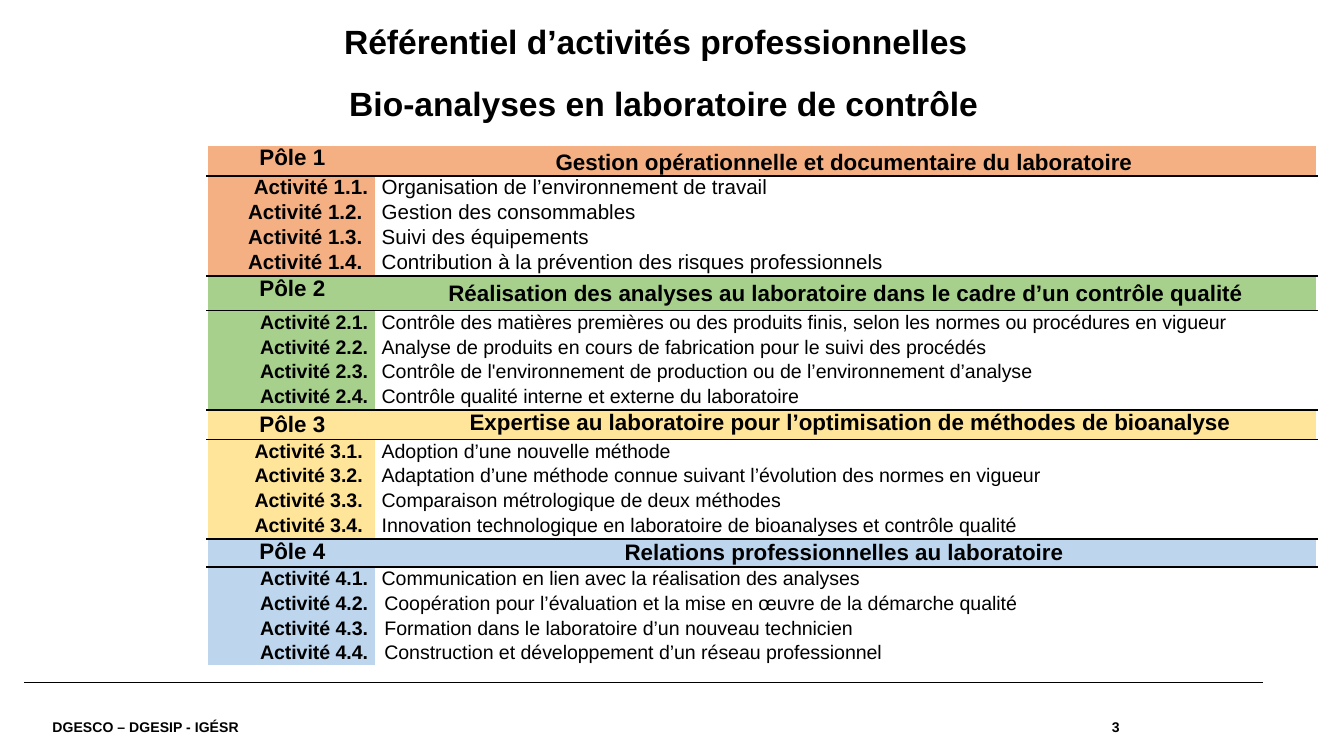
from lxml import etree
from pptx import Presentation
from pptx.dml.color import RGBColor
from pptx.enum.shapes import MSO_CONNECTOR
from pptx.enum.text import MSO_ANCHOR, MSO_AUTO_SIZE, PP_ALIGN
from pptx.oxml.ns import qn
from pptx.util import Inches, Pt

LEFT, CENTER, RIGHT, JUSTIFY = PP_ALIGN.LEFT, PP_ALIGN.CENTER, PP_ALIGN.RIGHT, PP_ALIGN.JUSTIFY
TOP, MIDDLE = MSO_ANCHOR.TOP, MSO_ANCHOR.MIDDLE
STRAIGHT = MSO_CONNECTOR.STRAIGHT

FONT = "Arial"
COLORS = {
    "black": "000000",
    "white": "FFFFFF",
    "orange": "F4B083",
    "green": "A8D08D",
    "yellow": "FFE599",
    "blue": "BDD6EE",
}
PLAIN_TABLE_STYLE = "{2D5ABB26-0587-4C30-8999-92F81FD0307C}"
ACTIVITY_HEIGHT = 0.74 / 4
INDENT = 0.02

# Each activity: label, description, left indent of the description
POLES = [
    {
        "name": "Pôle 1", "color": "orange", "height": 0.22, "size": 11, "spacing": 1.01,
        "title": "Gestion opérationnelle et documentaire du laboratoire ",
        "title_spacing": 1.15,
        "activities": [
            ("Activité 1.1.", "Organisation de l’environnement de travail", 0),
            ("Activité 1.2. ", "Gestion des consommables", 0),
            ("Activité 1.3. ", "Suivi des équipements", 0),
            ("Activité 1.4. ", "Contribution à la prévention des risques professionnels", 0),
        ],
    },
    {
        "name": "Pôle 2", "color": "green", "height": 0.26, "size": 10.5, "spacing": 1.04,
        "title": "Réalisation des analyses au laboratoire dans le cadre d’un contrôle qualité",
        "title_indent": 0,
        "activities": [
            ("Activité 2.1.", "Contrôle des matières premières ou des produits finis, "
             "selon les normes ou procédures en vigueur", 0),
            ("Activité 2.2.", "Analyse de produits en cours de fabrication "
             "pour le suivi des procédés", 0),
            ("Activité 2.3.", "Contrôle de l'environnement de production "
             "ou de l’environnement d’analyse", 0),
            ("Activité 2.4.", "Contrôle qualité interne et externe du laboratoire", 0),
        ],
    },
    {
        "name": "Pôle 3", "color": "yellow", "height": 0.22, "size": 10.5, "spacing": 1.04,
        "title": " Expertise au laboratoire pour l’optimisation de méthodes de bioanalyse",
        "name_spacing": 1.07, "title_anchor": TOP, "align": JUSTIFY,
        "activities": [
            ("Activité 3.1. ", "Adoption d’une nouvelle méthode", 0),
            ("Activité 3.2. ", "Adaptation d’une méthode connue suivant "
             "l’évolution des normes en vigueur", 0),
            ("Activité 3.3. ", "Comparaison métrologique de deux méthodes", 0),
            ("Activité 3.4. ", "Innovation technologique en laboratoire "
             "de bioanalyses et contrôle qualité", 0),
        ],
    },
    {
        "name": "Pôle 4", "color": "blue", "height": 0.21, "size": 10.5, "spacing": 1.04,
        "title": "Relations professionnelles au laboratoire ",
        "activities": [
            ("Activité 4.1.", "Communication en lien avec la réalisation des analyses", 0),
            ("Activité 4.2.", "Coopération pour l’évaluation et la mise en œuvre "
             "de la démarche qualité", INDENT),
            ("Activité 4.3.", "Formation dans le laboratoire d’un nouveau technicien", INDENT),
            ("Activité 4.4.", "Construction et développement d’un réseau professionnel", INDENT),
        ],
    },
]


def rgb(name):
    return RGBColor.from_string(COLORS[name])


def write_text(text_frame, text, size, bold=True, align=LEFT, spacing=1.0):
    paragraph = text_frame.paragraphs[0]
    paragraph.alignment = align
    paragraph.line_spacing = spacing
    run = paragraph.add_run()
    run.text = text
    run.font.name = FONT
    run.font.size = Pt(size)
    run.font.bold = bold
    run.font.color.rgb = rgb("black")
    return paragraph


def clear_insets(text_frame):
    text_frame.margin_left = text_frame.margin_right = 0
    text_frame.margin_top = text_frame.margin_bottom = 0


def set_title(slide, text):
    title = slide.shapes.title
    title.left, title.top = Inches(2.56), Inches(0.19)
    title.width, title.height = Inches(7.04), Inches(2.27)
    text_frame = title.text_frame
    text_frame.auto_size = MSO_AUTO_SIZE.NONE
    text_frame.vertical_anchor = TOP
    clear_insets(text_frame)
    write_text(text_frame, text, 18, spacing=0.9)


def add_footer_text(slide, text, left, width, align):
    box = slide.shapes.add_textbox(Inches(left), Inches(5.21), Inches(width), Inches(0.39))
    text_frame = box.text_frame
    text_frame.word_wrap = True
    text_frame.vertical_anchor = MIDDLE
    clear_insets(text_frame)
    write_text(text_frame, text, 7.5, align=align)


def add_footer_line(slide):
    line = slide.shapes.add_connector(
        STRAIGHT, Inches(0.18), Inches(5.08), Inches(9.4), Inches(5.08))
    line.line.color.rgb = rgb("black")
    line.line.width = Pt(0.8)
    etree.SubElement(line._element.spPr, qn("a:effectLst"))


def add_borders(cell, borders):
    properties = cell._tc.get_or_add_tcPr()
    for side in "LRTB":
        border = etree.SubElement(properties, qn(f"a:ln{side}"), w=str(Pt(1)))
        if side in borders:
            fill = etree.SubElement(border, qn("a:solidFill"))
            etree.SubElement(fill, qn("a:srgbClr"), val=COLORS[borders[side]])
        else:
            etree.SubElement(border, qn("a:noFill"))


def fill_cell(cell, text, size, color, borders, bold=True, align=LEFT,
              spacing=1.0, anchor=TOP, indent=INDENT):
    cell.margin_left = cell.margin_right = Inches(0.05)
    cell.margin_top = cell.margin_bottom = 0
    cell.vertical_anchor = anchor
    # Borders must come before the fill
    add_borders(cell, borders)
    cell.fill.solid()
    cell.fill.fore_color.rgb = rgb(color)
    paragraph = write_text(cell.text_frame, text, size, bold, align, spacing)
    paragraph.space_after = Pt(3)
    paragraph._p.get_or_add_pPr().set("marL", str(Inches(indent)))


def add_poles_table(slide):
    row_count = sum(1 + len(pole["activities"]) for pole in POLES)
    frame = slide.shapes.add_table(
        row_count, 2, Inches(1.54), Inches(1.08), Inches(8.26), Inches(3.87))
    table = frame.table
    table.first_row = table.horz_banding = False
    table._tbl.tblPr.find(qn("a:tableStyleId")).text = PLAIN_TABLE_STYLE
    table.columns[0].width, table.columns[1].width = Inches(1.25), Inches(7.01)

    row = 0
    for pole in POLES:
        # Heading row of the pole
        table.rows[row].height = Inches(pole["height"])
        edges = {"T": "black" if row else "white", "B": "black"}
        fill_cell(table.cell(row, 0), pole["name"], 12, pole["color"],
                  {"L": "white", **edges}, align=CENTER,
                  spacing=pole.get("name_spacing", 1.0))
        fill_cell(table.cell(row, 1), pole["title"], 12, pole["color"],
                  {"R": "white", **edges}, align=CENTER,
                  spacing=pole.get("title_spacing", 1.0),
                  anchor=pole.get("title_anchor", MIDDLE),
                  indent=pole.get("title_indent", INDENT))
        row += 1

        # Activity rows
        last = len(pole["activities"]) - 1
        for index, (label, description, indent) in enumerate(pole["activities"]):
            table.rows[row].height = Inches(ACTIVITY_HEIGHT)
            edges = {"T": "black"} if index == 0 else {}
            if index == last:
                edges = {"B": "white" if row == row_count - 1 else "black"}
            fill_cell(table.cell(row, 0), label, pole["size"], pole["color"],
                      {"L": "white", **edges}, align=RIGHT, spacing=pole["spacing"])
            fill_cell(table.cell(row, 1), description, pole["size"], "white",
                      {"R": "white", **edges}, bold=False, spacing=pole["spacing"],
                      align=pole.get("align", LEFT), indent=indent)
            row += 1


def add_subtitle(slide, text):
    box = slide.shapes.add_textbox(Inches(2.5), Inches(0.57), Inches(5.01), Inches(0.4))
    box.text_frame.word_wrap = True
    write_text(box.text_frame, text, 18)


def main():
    presentation = Presentation()
    presentation.slide_width = Inches(10)
    presentation.slide_height = Inches(10 * 9 / 16)
    slide = presentation.slides.add_slide(presentation.slide_layouts[5])
    add_footer_line(slide)
    add_footer_text(slide, "DGESCO – DGESIP - IGÉSR", 0.39, 6.46, LEFT)
    add_footer_text(slide, "3", 6.85, 1.48, RIGHT)
    set_title(slide, "Référentiel d’activités professionnelles")
    add_poles_table(slide)
    add_subtitle(slide, "Bio-analyses en laboratoire de contrôle")
    presentation.save("out.pptx")


if __name__ == "__main__":
    main()
